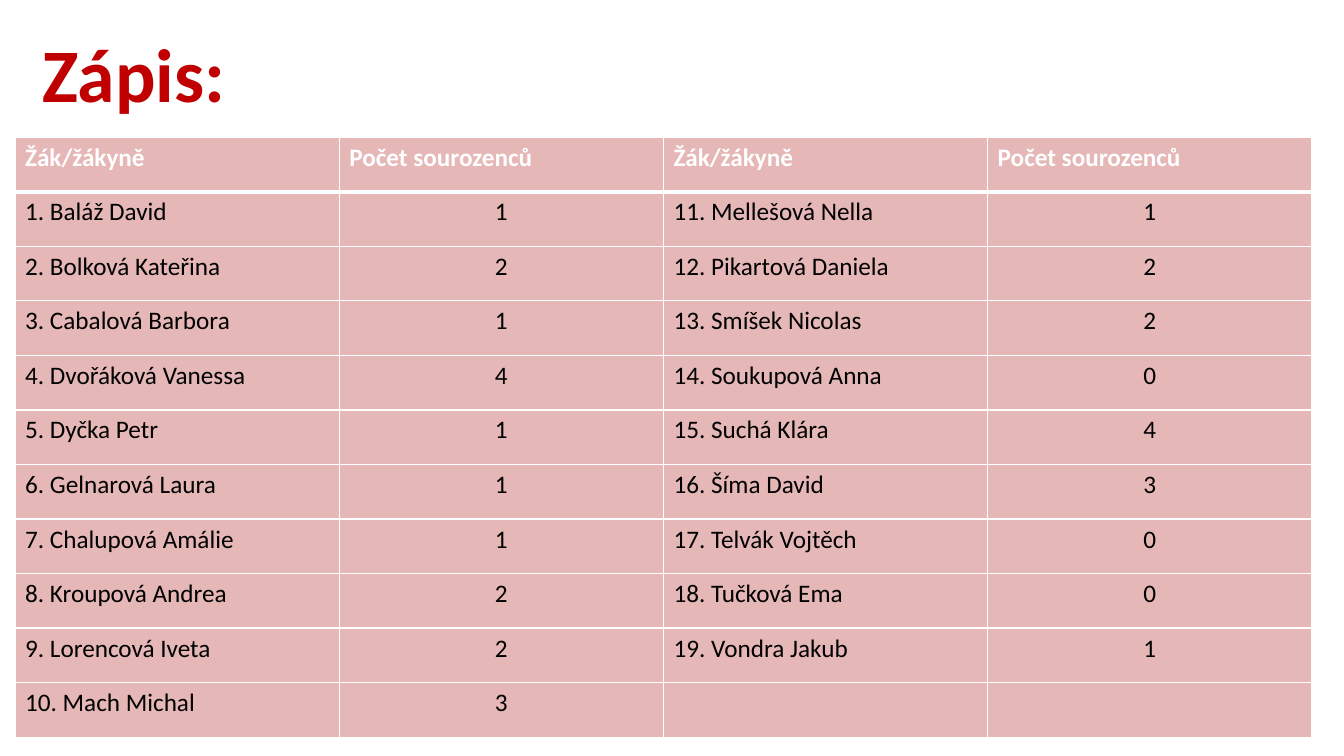
from lxml import etree
from pptx import Presentation
from pptx.dml.color import RGBColor
from pptx.enum.text import MSO_ANCHOR, PP_ALIGN
from pptx.oxml.ns import qn
from pptx.util import Cm, Pt

LEFT, MID = PP_ALIGN.LEFT, PP_ALIGN.CENTER
CENTER = MSO_ANCHOR.MIDDLE

# Content
TITLE = "Zápis:"
HEADS = ("Žák/žákyně", "Počet sourozenců")
PUPILS = [
    ("Baláž David", 1), ("Bolková Kateřina", 2), ("Cabalová Barbora", 1),
    ("Dvořáková Vanessa", 4), ("Dyčka Petr", 1), ("Gelnarová Laura", 1),
    ("Chalupová Amálie", 1), ("Kroupová Andrea", 2), ("Lorencová Iveta", 2),
    ("Mach Michal", 3), ("Mellešová Nella", 1), ("Pikartová Daniela", 2),
    ("Smíšek Nicolas", 2), ("Soukupová Anna", 0), ("Suchá Klára", 4),
    ("Šíma David", 3), ("Telvák Vojtěch", 0), ("Tučková Ema", 0),
    ("Vondra Jakub", 1),
]
HALF = 10  # pupils in each pair of columns
FONT, WHITE, BLACK, RED, PINK = "Calibri", "FFFFFF", "000000", "C00000", "E6B7B7"


def color(code):
    return RGBColor.from_string(code)


def style(para, size, code, bold, align=LEFT):
    para.alignment = align
    font = para.font
    font.name, font.size, font.bold = FONT, Pt(size), bold
    font.color.rgb = color(code)


def border(cell, side, width):
    props = cell._tc.get_or_add_tcPr()
    line = etree.SubElement(props, qn("a:ln" + side), w=str(Pt(width)))
    fill = etree.SubElement(line, qn("a:solidFill"))
    etree.SubElement(fill, qn("a:srgbClr"), val=WHITE)


# Slide
deck = Presentation()
deck.slide_width, deck.slide_height = Cm(33.87), Cm(19.05)
slide = deck.slides.add_slide(deck.slide_layouts[5])

# Title
title = slide.shapes.title
title.left, title.top, title.width, title.height = Cm(0.81), Cm(0.74), Cm(29.21), Cm(2.44)
title.text_frame.text = TITLE
title.text_frame.vertical_anchor = CENTER
head = title.text_frame.paragraphs[0]
head.line_spacing = 0.9
style(head, 54, RED, True)

# Rows: the second half of the list stands beside the first
rows = [HEADS * 2] + [[""] * 4 for _ in range(HALF)]
for i, (name, count) in enumerate(PUPILS):
    pair, row = divmod(i, HALF)
    rows[row + 1][2 * pair:2 * pair + 2] = f"{i + 1}. {name}", str(count)

# Table
table = slide.shapes.add_table(
    len(rows), 4, Cm(0.38), Cm(3.46), Cm(32.68), Cm(15.12)).table
for r, row in enumerate(rows):
    for c, text in enumerate(row):
        cell = table.cell(r, c)
        for side in "LRTB":
            thick = (r, side) in ((0, "B"), (1, "T"))
            border(cell, side, 3 if thick else 1)
        cell.fill.solid()
        cell.fill.fore_color.rgb = color(PINK)
        cell.text = text
        style(cell.text_frame.paragraphs[0], 18, BLACK if r else WHITE,
              r == 0, MID if r and c % 2 else LEFT)

deck.save("out.pptx")
